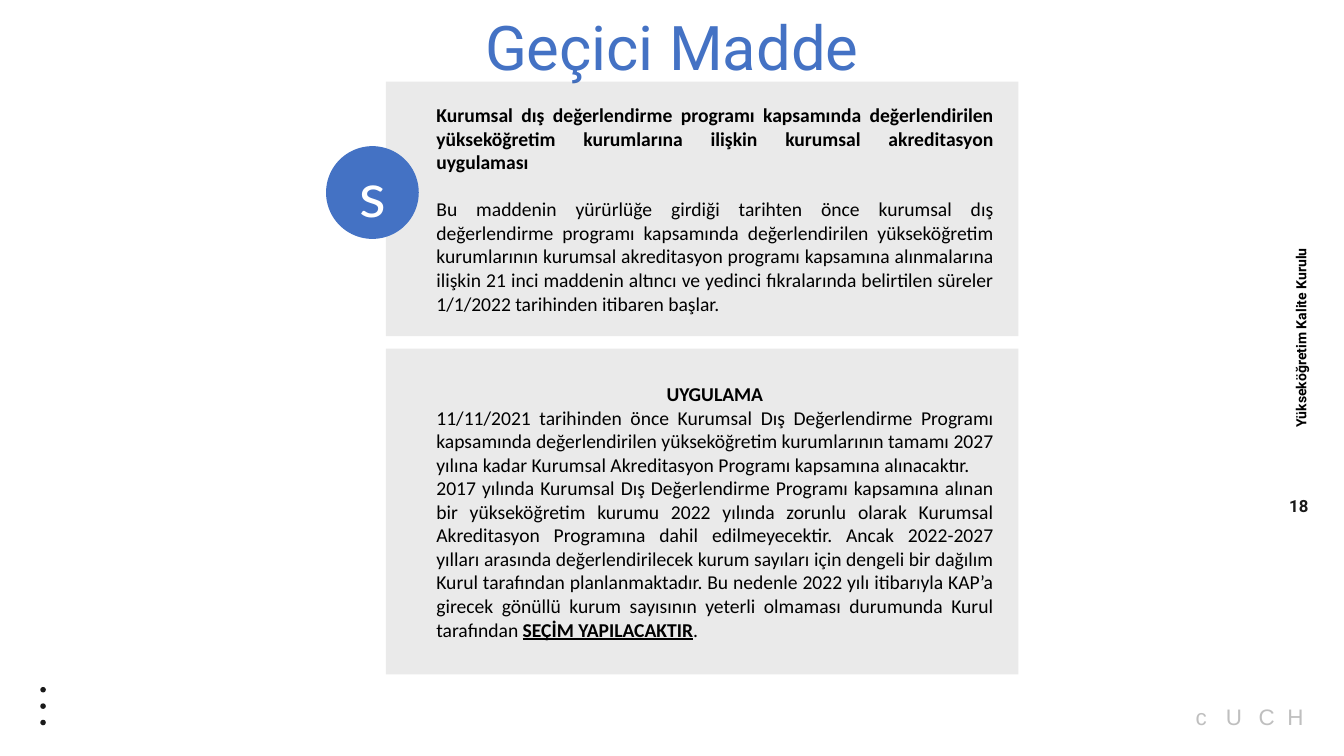
from dataclasses import dataclass

from lxml import etree
from pptx import Presentation
from pptx.dml.color import RGBColor
from pptx.enum.shapes import MSO_SHAPE
from pptx.enum.text import MSO_ANCHOR, MSO_AUTO_SIZE, PP_ALIGN
from pptx.oxml.ns import qn
from pptx.util import Inches, Pt

BLUE = RGBColor(0x44, 0x72, 0xC4)
INK = RGBColor(0x1A, 0x1A, 0x1A)
BLACK = RGBColor(0, 0, 0)
WHITE = RGBColor(0xFF, 0xFF, 0xFF)
SILVER = RGBColor(0xBF, 0xBF, 0xBF)

RECT, OVAL = MSO_SHAPE.RECTANGLE, MSO_SHAPE.OVAL
LEFT, CENTER, JUSTIFY = PP_ALIGN.LEFT, PP_ALIGN.CENTER, PP_ALIGN.JUSTIFY
TOP, MIDDLE = MSO_ANCHOR.TOP, MSO_ANCHOR.MIDDLE
GROW, FIXED = MSO_AUTO_SIZE.SHAPE_TO_FIT_TEXT, MSO_AUTO_SIZE.NONE

prs = Presentation()
prs.slide_width, prs.slide_height = Inches(26.67), Inches(15)
s = prs.slides.add_slide(prs.slide_layouts[6])


@dataclass(frozen=True)
class Box:
    """Percentages of the slide's width and height."""
    x: float
    y: float
    w: float
    h: float

    def emu(self) -> tuple[int, int, int, int]:
        col, row = prs.slide_width / 100, prs.slide_height / 100
        return (round(self.x * col), round(self.y * row),
                round(self.w * col), round(self.h * row))


@dataclass(frozen=True)
class Style:
    font: str
    size: float
    color: RGBColor
    bold: bool = False


@dataclass(frozen=True)
class Run:
    text: str
    bold: bool = False
    underline: bool = False


@dataclass(frozen=True)
class Para:
    runs: tuple[Run, ...]
    align: PP_ALIGN = JUSTIFY
    before: float = 0


@dataclass(frozen=True)
class Panel:
    box: Box
    paras: tuple[Para, ...]


BODY = Style("Calibri", 28, BLACK)
TITLE = Style("Roboto", 88, BLUE)
BADGE = Style("Lato", 88, WHITE)
SIDE = Style("Roboto", 20, BLACK, True)
NUMBER = Style("Roboto", 24, INK, True)
LETTER = Style("Arial", 32, SILVER)


def write(sp, paras: tuple[Para, ...], style: Style, anchor=MIDDLE, wrap=True,
          grow=True, insets=(0.1, 0.05, 0.1, 0.05)) -> None:
    tf = sp.text_frame
    tf.word_wrap = wrap
    tf.auto_size = GROW if grow else FIXED
    tf.vertical_anchor = anchor
    tf.margin_left, tf.margin_top, tf.margin_right, tf.margin_bottom = map(Inches, insets)
    for i, para in enumerate(paras):
        p = tf.add_paragraph() if i else tf.paragraphs[0]
        p.alignment = para.align
        if para.before:
            p.space_before = Pt(para.before)
        for run in para.runs:
            r = p.add_run()
            r.text = run.text
            r.font.name = style.font
            r.font.size = Pt(style.size)
            r.font.color.rgb = style.color
            r.font.bold = style.bold or run.bold
            r.font.underline = run.underline


def add_label(box: Box, text: str, style: Style, align=CENTER, **layout):
    sp = s.shapes.add_textbox(*box.emu())
    write(sp, (Para((Run(text),), align),), style, **layout)
    return sp


def add_filled(kind: MSO_SHAPE, box: Box, color: RGBColor, opacity: int = 100):
    sp = s.shapes.add_shape(kind, *box.emu())
    sp.shadow.inherit = False
    sp.line.fill.background()
    sp.fill.solid()
    sp.fill.fore_color.rgb = color
    if opacity < 100:
        clr = sp.fill._xPr.find(".//" + qn("a:srgbClr"))
        etree.SubElement(clr, qn("a:alpha")).set("val", str(opacity * 1000))
    return sp


def add_panel(panel: Panel) -> None:
    sp = add_filled(RECT, panel.box, INK, 9)
    write(sp, panel.paras, BODY, insets=(1, 0.4, 0.5, 0.4))


ARTICLE = Panel(Box(28.72, 10.8, 47.06, 33.67), (
    Para((Run("Kurumsal dış değerlendirme programı kapsamında değerlendirilen "
              "yükseköğretim kurumlarına ilişkin kurumsal akreditasyon uygulaması", True),)),
    Para((Run("Bu maddenin yürürlüğe girdiği tarihten önce kurumsal dış değerlendirme "
              "programı kapsamında değerlendirilen yükseköğretim kurumlarının kurumsal "
              "akreditasyon programı kapsamına alınmalarına ilişkin 21 inci maddenin altıncı "
              "ve yedinci fıkralarında belirtilen süreler 1/1/2022 tarihinden itibaren "
              "başlar."),), before=34),
))
PRACTICE = Panel(Box(28.72, 46.13, 47.06, 43.07), (
    Para((Run("UYGULAMA", True),), CENTER),
    Para((Run("11/11/2021 tarihinden önce Kurumsal Dış Değerlendirme Programı kapsamında "
              "değerlendirilen yükseköğretim kurumlarının tamamı 2027 yılına kadar Kurumsal "
              "Akreditasyon Programı kapsamına alınacaktır."),)),
    Para((Run("2017 yılında Kurumsal Dış Değerlendirme Programı kapsamına alınan bir "
              "yükseköğretim kurumu 2022 yılında zorunlu olarak Kurumsal Akreditasyon "
              "Programına dahil edilmeyecektir. Ancak 2022-2027 yılları arasında "
              "değerlendirilecek kurum sayıları için dengeli bir dağılım Kurul tarafından "
              "planlanmaktadır. Bu nedenle 2022 yılı itibarıyla KAP’a girecek gönüllü kurum "
              "sayısının yeterli olmaması durumunda Kurul tarafından "),
          Run("SEÇİM YAPILACAKTIR", True, True), Run("."))),
))


def main() -> None:
    side = add_label(Box(89.61, 43, 14.36, 2.93), "Yükseköğretim Kalite Kurulu",
                     SIDE, LEFT, wrap=False)
    side.rotation = 270
    for i in range(3):
        add_filled(OVAL, Box(3, 90.87 + 2.17 * i, 0.41, 0.73), INK)
    add_label(Box(95.99, 64.73, 1.31, 4.27), "18", NUMBER, wrap=False, grow=False,
              insets=(0.13, 0.07, 0.13, 0.07))
    for letter, x in zip("cUCH", (88.15, 90.59, 93.03, 95.16)):
        add_label(Box(x, 92.67, 2.44, 4.27), letter, LETTER, wrap=False)
    add_label(Box(13.05, 0.87, 73.87, 10.53), "Geçici Madde", TITLE, anchor=TOP)
    add_panel(ARTICLE)
    badge = add_filled(OVAL, Box(24.26, 19.33, 6.9, 12.27), BLUE)
    write(badge, (Para((Run("s"),), CENTER),), BADGE, grow=False, insets=(0.1, 0, 0.1, 0))
    add_panel(PRACTICE)
    prs.save("out.pptx")


if __name__ == "__main__":
    main()
